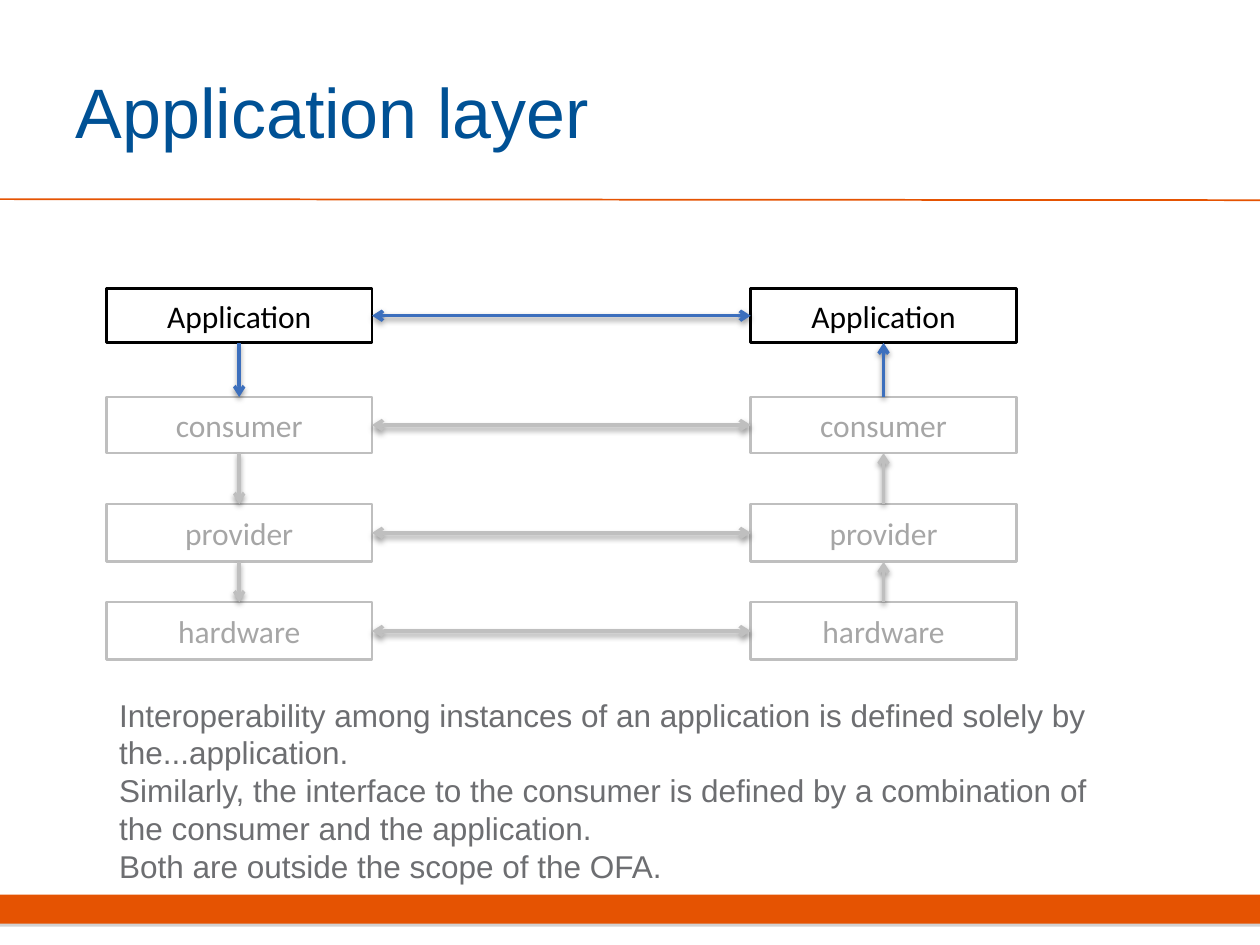
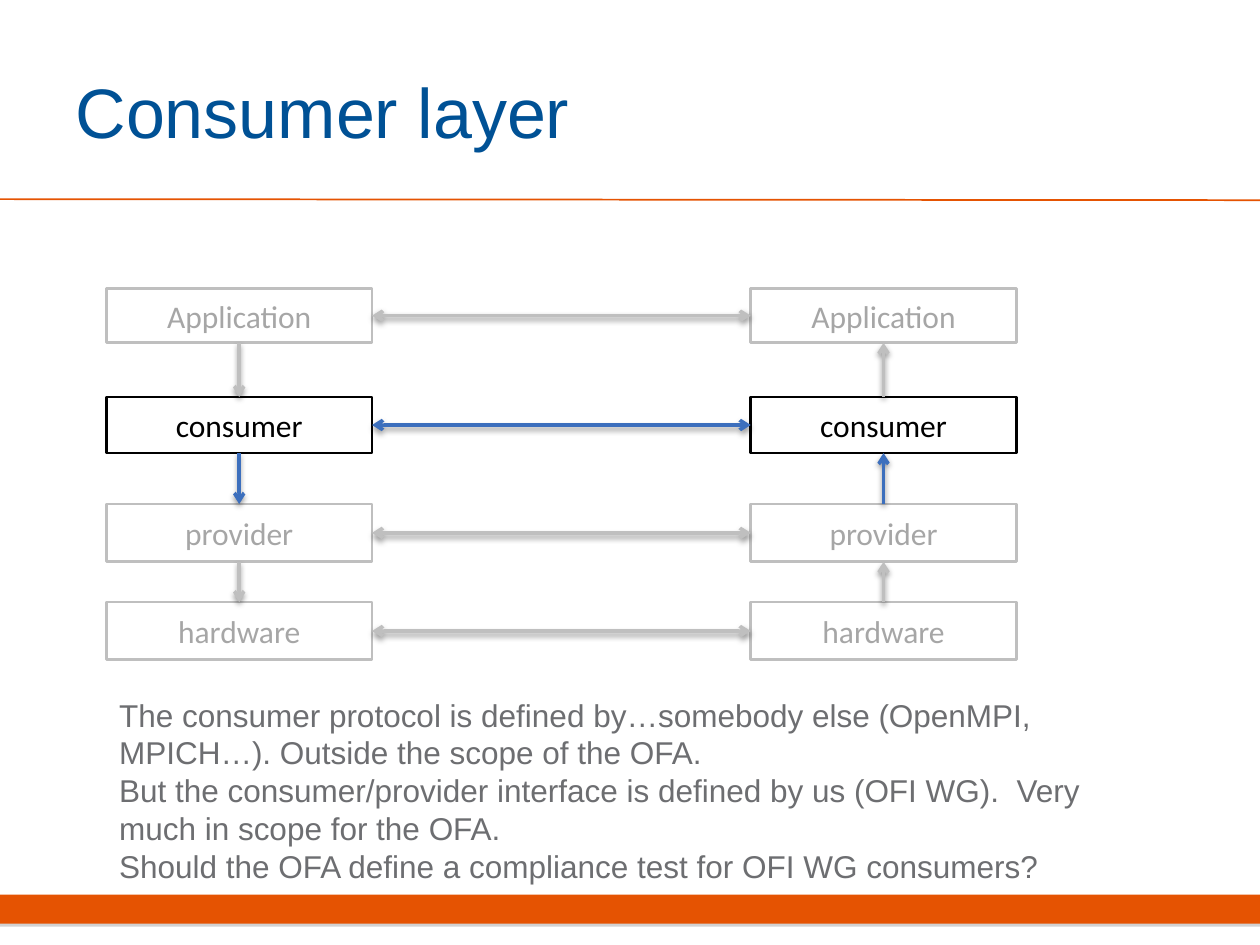
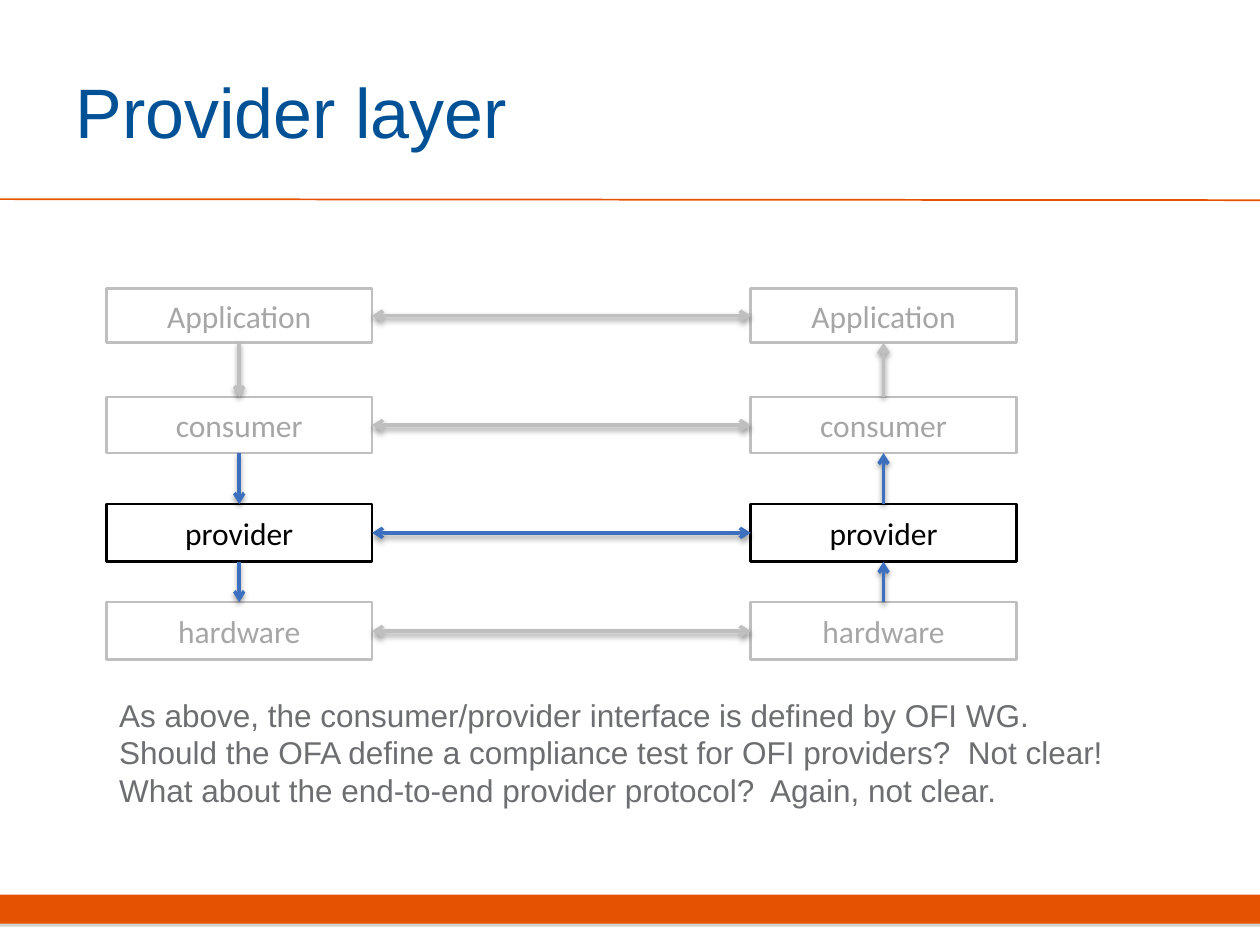
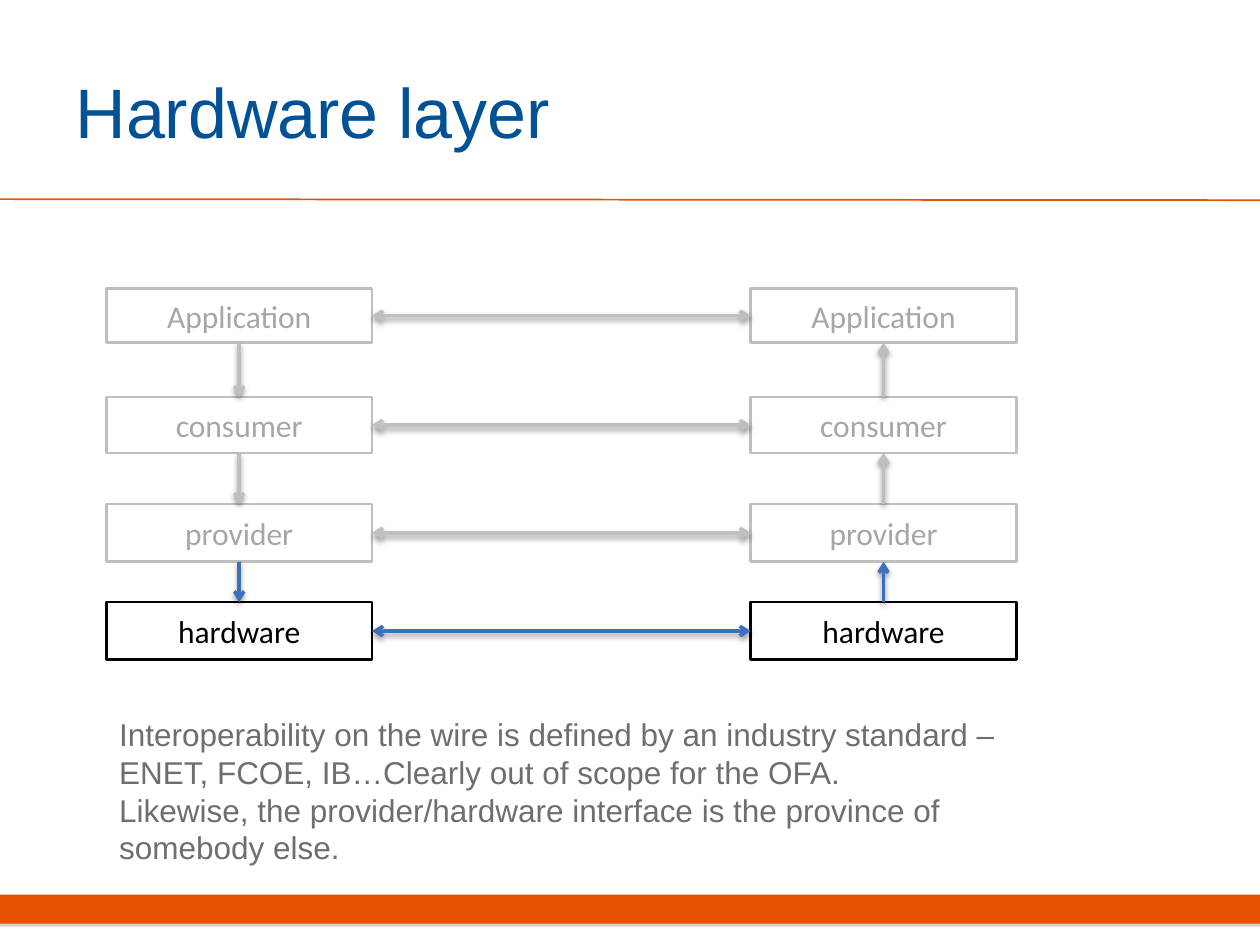
import pptx
import pptx.dml.color
import pptx.enum.shapes
import pptx.enum.text
import pptx.oxml.ns
import pptx.util
from lxml import etree

Pt = pptx.util.Pt
RGBColor = pptx.dml.color.RGBColor
MSO_SHAPE = pptx.enum.shapes.MSO_SHAPE
MSO_CONNECTOR = pptx.enum.shapes.MSO_CONNECTOR
PP_PLACEHOLDER = pptx.enum.shapes.PP_PLACEHOLDER
MSO_ANCHOR = pptx.enum.text.MSO_ANCHOR
MSO_AUTO_SIZE = pptx.enum.text.MSO_AUTO_SIZE
PP_ALIGN = pptx.enum.text.PP_ALIGN
qn = pptx.oxml.ns.qn

ORANGE = RGBColor(0xE5, 0x53, 0x02)
NAVY = RGBColor(0x00, 0x51, 0x95)
BLUE = RGBColor(0x3C, 0x6F, 0xBD)
BLACK = RGBColor(0x00, 0x00, 0x00)
GRAY = RGBColor(0x80, 0x80, 0x80)
SLATE = RGBColor(0x6D, 0x6E, 0x71)
PALE = RGBColor(0xBF, 0xBF, 0xBF)
FADED = RGBColor(0xA6, 0xA6, 0xA6)

SLIDE_W, SLIDE_H = 720, 540
TOP, BOTTOM, LEFT, RIGHT = 0, 2, 1, 3
LAYERS = (
    ("Application", 0, 31),
    ("consumer", 62, 32),
    ("provider", 123.1, 33),
    ("hardware", 179.2, 33),
)
DIAGRAM = (60.8, 164.9, 522.8)
STACK_W = 151.8

SLIDES = (
    dict(title="Application layer", active=0, gaps=(0,), box=(61, 394, 568, 117), notes=(
        "Interoperability among instances of an application is defined solely by the...application.",
        "Similarly, the interface to the consumer is defined by a combination of "
        "the consumer and the application.",
        "Both are outside the scope of the OFA.")),
    dict(title="Consumer layer", active=1, gaps=(1,), box=(61, 394, 568, 117), notes=(
        "The consumer protocol is defined by…somebody else (OpenMPI, MPICH…). "
        "Outside the scope of the OFA.",
        "But the consumer/provider interface is defined by us (OFI WG).  "
        "Very much in scope for the OFA.",
        "Should the OFA define a compliance test for OFI WG consumers?")),
    dict(title="Provider layer", active=2, gaps=(1, 2), box=(61, 394, 598, 73), notes=(
        "As above, the consumer/provider interface is defined by OFI WG.",
        "Should the OFA define a compliance test for OFI providers?  Not clear!",
        "What about the end-to-end provider protocol?  Again, not clear.")),
    dict(title="Hardware layer", active=3, gaps=(2,), box=(61, 405, 568, 94), notes=(
        "Interoperability on the wire is defined by an industry standard – ENET, FCOE, IB…"
        "Clearly out of scope for the OFA.",
        "Likewise, the provider/hardware interface is the province of somebody else.")),
)


def write(tf, *lines, font="Arial", size=18, color=SLATE, align=PP_ALIGN.LEFT,
          anchor=MSO_ANCHOR.TOP):
    """Fill a text frame with one formatted paragraph per line."""
    tf.word_wrap = True
    tf.vertical_anchor = anchor
    for i, line in enumerate(lines):
        p = tf.add_paragraph() if i else tf.paragraphs[0]
        p.alignment = align
        r = p.add_run()
        r.text = line
        r.font.name = font
        r.font.size = Pt(size)
        r.font.color.rgb = color


def set_shadow(sp, color=None, alpha=0, blur=0, dist=0):
    """Give a shape a downward shadow, or none when no colour is given."""
    effects = etree.SubElement(sp.element.spPr, qn("a:effectLst"))
    if color is None:
        return
    shadow = etree.SubElement(effects, qn("a:outerShdw"), blurRad=str(Pt(blur)),
                              dist=str(Pt(dist)), dir="5400000", rotWithShape="0")
    clr = etree.SubElement(shadow, qn("a:srgbClr"), val=str(color))
    etree.SubElement(clr, qn("a:alpha"), val=str(alpha * 1000))


def add_link(slide, start, start_side, end, end_side, color, both=False):
    """Join two boxes with an arrow, pointed at both ends on request."""
    cxn = slide.shapes.add_connector(MSO_CONNECTOR.STRAIGHT, 0, 0, 0, 0)
    cxn.begin_connect(start, start_side)
    cxn.end_connect(end, end_side)
    cxn.line.color.rgb = color
    cxn.line.width = Pt(2)
    ln = cxn.element.spPr.find(qn("a:ln"))
    for tag in ("a:headEnd", "a:tailEnd") if both else ("a:tailEnd",):
        etree.SubElement(ln, qn(tag), type="arrow")
    set_shadow(cxn, BLACK, alpha=38, blur=3.1, dist=1.6)


def add_stack(slide, left, top, active):
    """Draw one column of layer boxes and return them from top to bottom."""
    boxes = []
    for i, (name, offset, height) in enumerate(LAYERS):
        sp = slide.shapes.add_shape(MSO_SHAPE.RECTANGLE, Pt(left), Pt(top + offset),
                                    Pt(STACK_W), Pt(height))
        sp.fill.background()
        sp.line.color.rgb = BLACK if i == active else PALE
        sp.line.width = Pt(1.5)
        sp.shadow.inherit = False
        write(sp.text_frame, name, font="Calibri", color=BLACK if i == active else FADED,
              align=PP_ALIGN.CENTER, anchor=MSO_ANCHOR.MIDDLE)
        boxes.append(sp)
    return boxes


def add_diagram(slide, left, top, width, active, gaps):
    """Draw two linked stacks, highlighting the active layer and gaps."""
    senders = add_stack(slide, left, top, active)
    receivers = add_stack(slide, left + width - STACK_W - 2.8, top, active)
    for i, (sender, receiver) in enumerate(zip(senders, receivers)):
        add_link(slide, sender, RIGHT, receiver, LEFT, BLUE if i == active else PALE, both=True)
    for i in range(len(LAYERS) - 1):
        color = BLUE if i in gaps else PALE
        add_link(slide, senders[i], BOTTOM, senders[i + 1], TOP, color)
        add_link(slide, receivers[i + 1], TOP, receivers[i], BOTTOM, color)


def add_notes_box(slide, box, lines):
    """Add the explanation below the diagram."""
    tf = slide.shapes.add_textbox(*map(Pt, box)).text_frame
    write(tf, *lines)
    tf.auto_size = MSO_AUTO_SIZE.SHAPE_TO_FIT_TEXT


def set_title(slide, text):
    """Place and style the slide title."""
    sp = slide.shapes.title
    sp.left, sp.top, sp.width, sp.height = Pt(36), Pt(18), Pt(588), Pt(90)
    write(sp.text_frame, text, size=40, color=NAVY, anchor=MSO_ANCHOR.MIDDLE)


def decorate_layout(layout, slide):
    """Draw the footer band and title rule and move them into the layout."""
    for ph in list(layout.placeholders):
        if ph.placeholder_format.type != PP_PLACEHOLDER.TITLE:
            ph.element.getparent().remove(ph.element)
    band = slide.shapes.add_shape(MSO_SHAPE.RECTANGLE, 0, Pt(511.2), Pt(SLIDE_W), Pt(16.6))
    band.fill.solid()
    band.fill.fore_color.rgb = ORANGE
    band.line.fill.background()
    set_shadow(band, GRAY, alpha=35, dist=1.8)
    rule = slide.shapes.add_connector(MSO_CONNECTOR.STRAIGHT, 0, Pt(113.8), Pt(SLIDE_W), Pt(114.4))
    rule.line.color.rgb = ORANGE
    rule.line.width = Pt(1)
    set_shadow(rule)
    for sp in (band, rule):
        layout.shapes.element.append(sp.element)


def add_layer_slide(prs, layout, title, active, gaps, box, notes):
    """Add a slide that explains one layer of the stack."""
    slide = prs.slides.add_slide(layout)
    if len(prs.slides) == 1:
        decorate_layout(layout, slide)
    set_title(slide, title)
    add_diagram(slide, *DIAGRAM, active, gaps)
    add_notes_box(slide, box, notes)


def main():
    """Build and save the presentation."""
    prs = pptx.Presentation()
    prs.slide_width, prs.slide_height = Pt(SLIDE_W), Pt(SLIDE_H)
    layout = prs.slide_layouts[5]
    for content in SLIDES:
        add_layer_slide(prs, layout, **content)
    prs.save("out.pptx")


if __name__ == "__main__":
    main()
